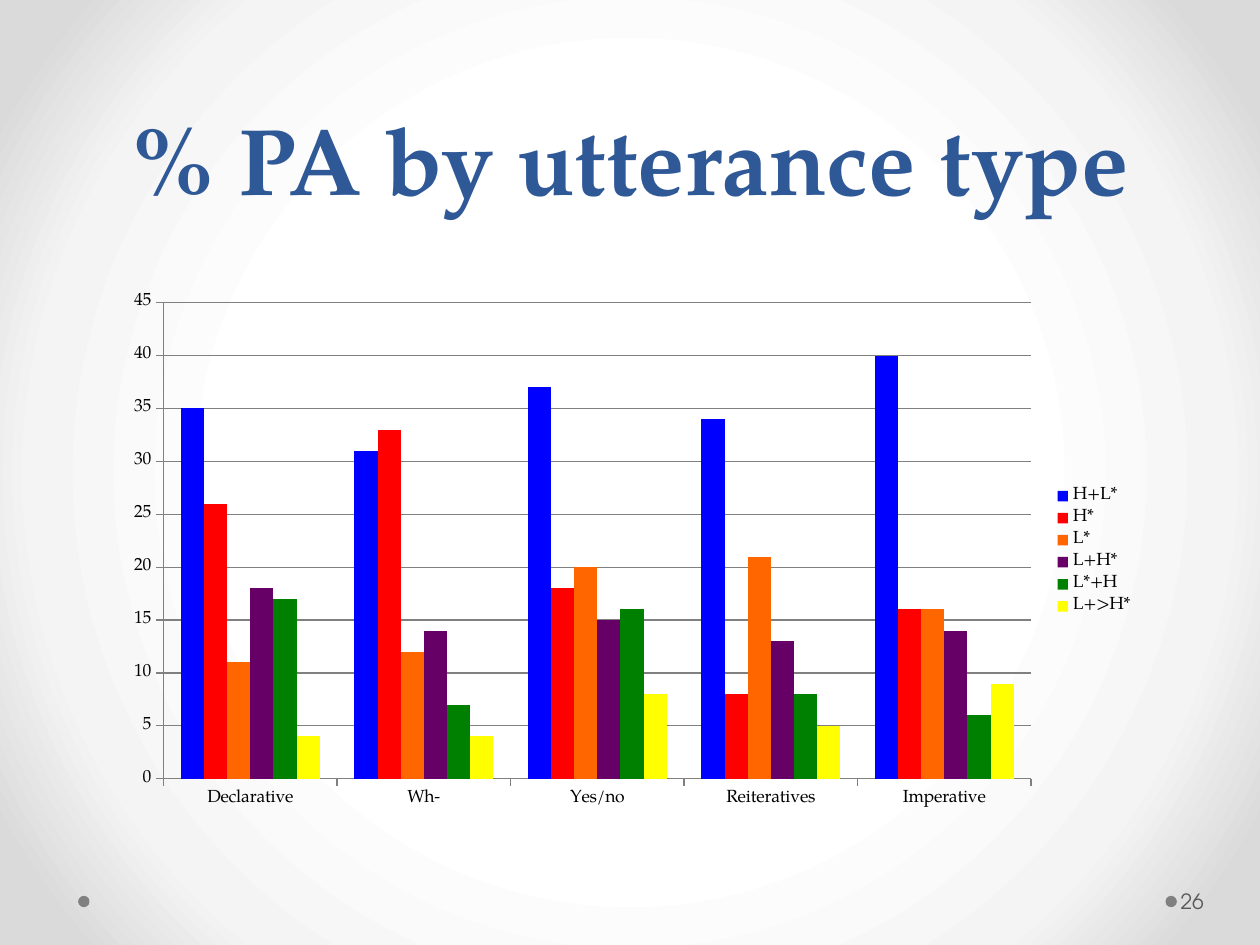
from typing import NamedTuple

from lxml.etree import SubElement
from pptx import Presentation
from pptx.chart.data import CategoryChartData
from pptx.dml.color import RGBColor
from pptx.enum.chart import XL_CHART_TYPE as ChartType
from pptx.enum.chart import XL_LEGEND_POSITION as LegendPosition
from pptx.enum.chart import XL_TICK_MARK as TickMark
from pptx.enum.shapes import MSO_SHAPE as ShapeType
from pptx.enum.text import MSO_ANCHOR as Anchor
from pptx.enum.text import PP_ALIGN as Align
from pptx.oxml.ns import qn
from pptx.util import Inches, Pt

SERIF = "TeX Gyre Pagella"
SANS = "TeX Gyre Adventor"
GRAY = "808080"


class Box(NamedTuple):
    left: float
    top: float
    width: float
    height: float

    def lengths(self) -> list:
        return [Inches(value) for value in self]


class Label(NamedTuple):
    text: str
    box: Box
    font: str
    size: float
    color: str
    bold: bool
    align: Align
    anchor: Anchor
    left_inset: float
    right_inset: float
    line_spacing: float | None = None


class PitchAccent(NamedTuple):
    name: str
    color: str
    values: tuple


LABELS = [
    Label("% PA by utterance type", Box(0.5, 0, 9, 1.75), SERIF, 54, "2F5897",
          True, Align.CENTER, Anchor.BOTTOM, 0.1, 0.1, 58),
    Label("26", Box(9.34, 6.95, 0.61, 0.4), SANS, 12, "595959",
          False, Align.LEFT, Anchor.MIDDLE, 0.03, 0.05),
]
DOTS = [Box(left, 7.11, 0.09, 0.09) for left in (9.25, 0.62)]
BACKGROUND_STOPS = [(50, "FFFFFF"), (76, "F4F4F4"), (92, "DADADA")]
UTTERANCE_TYPES = ["Declarative", "Wh-", "Yes/no", "Reiteratives", "Imperative"]
PITCH_ACCENTS = [
    PitchAccent("H+L*", "0000FF", (35, 31, 37, 34, 40)),
    PitchAccent("H*", "FF0000", (26, 33, 18, 8, 16)),
    PitchAccent("L*", "FF6600", (11, 12, 20, 21, 16)),
    PitchAccent("L+H*", "660066", (18, 14, 15, 13, 14)),
    PitchAccent("L*+H", "008000", (17, 7, 16, 8, 6)),
    PitchAccent("L+>H*", "FFFF00", (4, 4, 8, 5, 9)),
]


def rgb(color: str) -> RGBColor:
    return RGBColor.from_string(color)


def paint_background(slide) -> None:
    fill = slide.background.fill
    fill.gradient()
    gradient = slide.element.find(".//" + qn("a:gradFill"))
    for child in list(gradient):
        gradient.remove(child)
    stops = SubElement(gradient, qn("a:gsLst"))
    for position, color in BACKGROUND_STOPS:
        stop = SubElement(stops, qn("a:gs"), pos=str(position * 1000))
        SubElement(stop, qn("a:srgbClr"), val=color)
    circle = SubElement(gradient, qn("a:path"), path="circle")
    SubElement(circle, qn("a:fillToRect"), l="50000", t="50000", r="50000", b="50000")


def add_dot(slide, box: Box) -> None:
    shape = slide.shapes.add_shape(ShapeType.OVAL, *box.lengths())
    shape.shadow.inherit = False
    shape.fill.solid()
    shape.fill.fore_color.rgb = rgb(GRAY)
    shape.line.fill.background()


def add_label(slide, label: Label) -> None:
    text_frame = slide.shapes.add_textbox(*label.box.lengths()).text_frame
    text_frame.word_wrap = True
    text_frame.vertical_anchor = label.anchor
    text_frame.margin_left = Inches(label.left_inset)
    text_frame.margin_right = Inches(label.right_inset)
    text_frame.text = label.text
    paragraph = text_frame.paragraphs[0]
    paragraph.alignment = label.align
    if label.line_spacing:
        paragraph.line_spacing = Pt(label.line_spacing)
    font = paragraph.runs[0].font
    font.name = label.font
    font.size = Pt(label.size)
    font.bold = label.bold
    font.color.rgb = rgb(label.color)


def add_accent_chart(slide, box: Box) -> None:
    data = CategoryChartData()
    data.categories = UTTERANCE_TYPES
    for accent in PITCH_ACCENTS:
        data.add_series(accent.name, accent.values)
    chart = slide.shapes.add_chart(
        ChartType.COLUMN_CLUSTERED, *box.lengths(), data).chart
    chart.has_title = False
    chart.font.name = SERIF
    chart.font.size = Pt(10)
    chart.font.color.rgb = rgb("000000")
    chart.has_legend = True
    chart.legend.position = LegendPosition.RIGHT
    chart.legend.include_in_layout = False

    plot = chart.plots[0]
    plot.gap_width = 150
    plot.overlap = 0
    plot.vary_by_categories = False
    for series, accent in zip(plot.series, PITCH_ACCENTS):
        series.format.fill.solid()
        series.format.fill.fore_color.rgb = rgb(accent.color)

    value_axis = chart.value_axis
    value_axis.minimum_scale = 0
    value_axis.maximum_scale = 45
    value_axis.major_unit = 5
    value_axis.has_major_gridlines = True
    for axis in (chart.category_axis, value_axis):
        axis.major_tick_mark = TickMark.OUTSIDE
        axis.minor_tick_mark = TickMark.NONE
    for lined in (chart.category_axis, value_axis, value_axis.major_gridlines):
        lined.format.line.color.rgb = rgb(GRAY)
        lined.format.line.width = Pt(0.75)


def main() -> None:
    presentation = Presentation()
    presentation.slide_width = Inches(10)
    presentation.slide_height = Inches(7.5)
    slide = presentation.slides.add_slide(presentation.slide_layouts[6])
    paint_background(slide)
    for dot in DOTS:
        add_dot(slide, dot)
    for label in LABELS:
        add_label(slide, label)
    add_accent_chart(slide, Box(0.9, 2.25, 8.2, 4.25))
    presentation.save("out.pptx")


if __name__ == "__main__":
    main()
